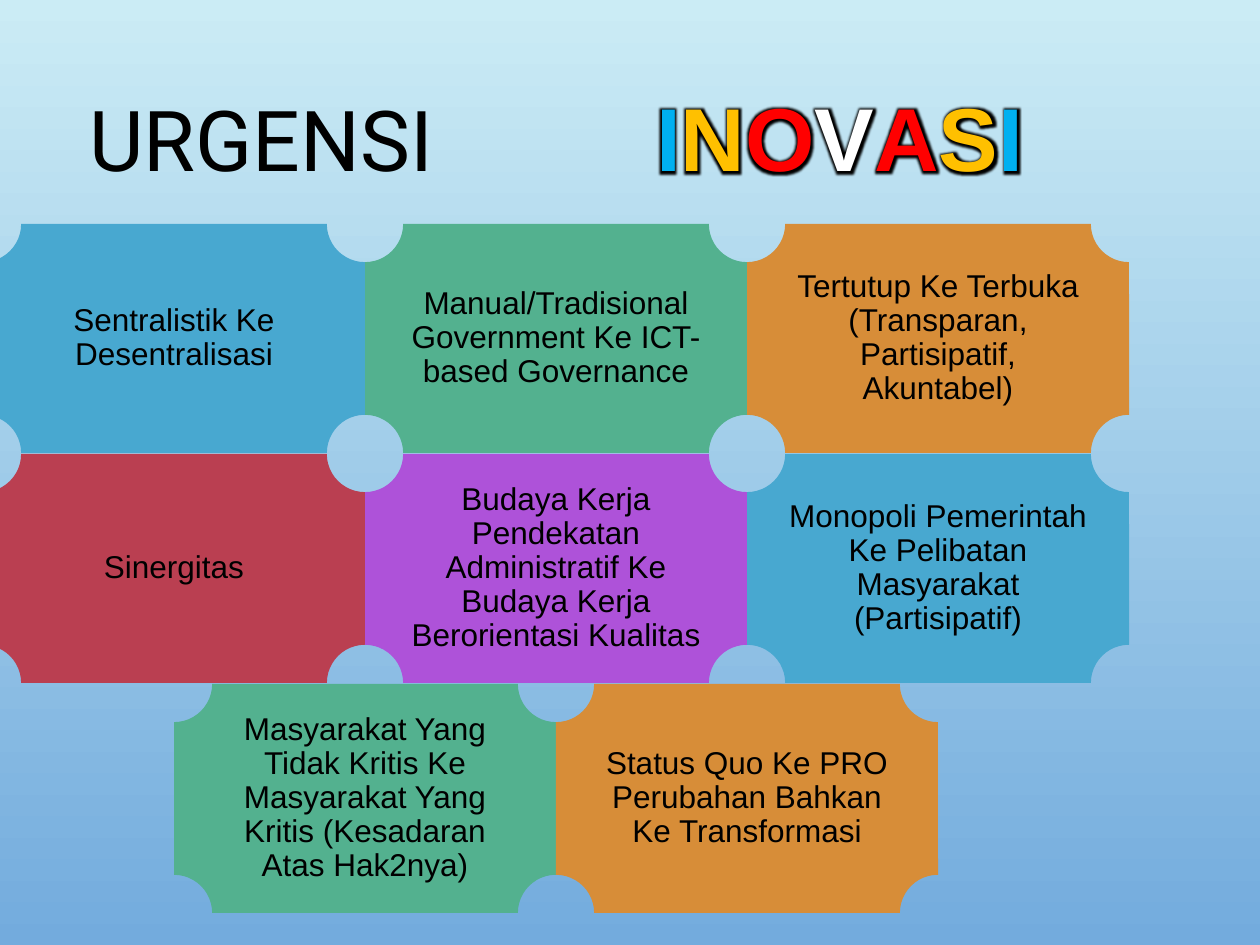
from lxml.etree import SubElement
from pptx import Presentation
from pptx.dml.color import RGBColor
from pptx.enum.shapes import MSO_SHAPE
from pptx.enum.text import MSO_ANCHOR as ANCHOR, PP_ALIGN as ALIGN
from pptx.oxml.ns import qn
from pptx.util import Pt

PX = 914400 / 126
COLORS = {
    "sky": "CBECF5", "dusk": "73ABDD", "black": "000000", "white": "FFFFFF",
    "blue": "48A8D0", "green": "53B18F", "orange": "D78D38",
    "crimson": "BA3F51", "purple": "AE52D9",
    "cyan": "00B0F0", "gold": "FFC000", "red": "FF0000",
}
TILE_W, TILE_H = 382, 229
ROW_PITCH = 230
GRID_LEFT, GRID_TOP = -17, 224
ROWS = [
    (0, [("Sentralistik Ke Desentralisasi", "blue"),
         ("Manual/Tradisional Government Ke ICT-based Governance", "green"),
         ("Tertutup Ke Terbuka (Transparan, Partisipatif, Akuntabel)", "orange")]),
    (0, [("Sinergitas", "crimson"),
         ("Budaya Kerja Pendekatan Administratif Ke Budaya Kerja "
          "Berorientasi Kualitas", "purple"),
         ("Monopoli Pemerintah Ke Pelibatan Masyarakat (Partisipatif)", "blue")]),
    (TILE_W // 2, [
        ("Masyarakat Yang Tidak Kritis Ke Masyarakat Yang Kritis "
         "(Kesadaran Atas Hak2nya)", "green"),
        ("Status Quo Ke PRO Perubahan Bahkan Ke Transformasi", "orange")]),
]
LETTERS = list(zip("INOVASI",
                   ["cyan", "gold", "red", "white", "red", "gold", "cyan"]))


def px(*values):
    return [round(v * PX) for v in values]


def rgb(name):
    return RGBColor.from_string(COLORS[name])


def set_background(slide):
    fill = slide.background.fill
    fill.gradient()
    fill.gradient_angle = 270
    for stop, name, pos in zip(fill.gradient_stops, ["sky", "dusk"], [0, 1]):
        stop.color.rgb = rgb(name)
        stop.position = pos


def write(sp, parts, size, font, align, anchor, spacing, bold=False):
    tf = sp.text_frame
    tf.word_wrap = True
    tf.vertical_anchor = anchor
    p = tf.paragraphs[0]
    p.alignment = align
    p.line_spacing = spacing
    for text, color in parts:
        r = p.add_run()
        r.text = text
        r.font.size = Pt(size)
        r.font.name = font
        r.font.bold = bold
        r.font.color.rgb = rgb(color)


def add_tile(slide, x, y, text, color):
    sp = slide.shapes.add_shape(MSO_SHAPE.PLAQUE, *px(x, y, TILE_W, TILE_H))
    sp.shadow.inherit = False
    sp.fill.solid()
    sp.fill.fore_color.rgb = rgb(color)
    sp.line.fill.background()
    tf = sp.text_frame
    tf.margin_left = tf.margin_right = tf.margin_top = tf.margin_bottom = px(9)[0]
    write(sp, [(text, "black")], 18, "Arial", ALIGN.CENTER, ANCHOR.MIDDLE, 0.9)


def add_glow(r, color, radius):
    r_pr = r.font._element
    effects = SubElement(r_pr, qn("a:effectLst"))
    r_pr.find(qn("a:solidFill")).addnext(effects)
    glow = SubElement(effects, qn("a:glow"), rad=str(Pt(radius)))
    SubElement(glow, qn("a:srgbClr"), val=COLORS[color])


def add_title(slide):
    sp = slide.shapes.add_textbox(*px(77, 96, 420, 97))
    write(sp, [("URGENSI", "black")], 48, "Roboto", ALIGN.LEFT, ANCHOR.MIDDLE, 0.9)


def add_wordmark(slide):
    sp = slide.shapes.add_textbox(*px(514, 100, 651, 93))
    write(sp, LETTERS, 51, "Arial", ALIGN.CENTER, ANCHOR.BOTTOM, 0.7, bold=True)
    for r in sp.text_frame.paragraphs[0].runs:
        add_glow(r, "black", 5)


def main():
    prs = Presentation()
    prs.slide_width, prs.slide_height = px(1260, 945)
    slide = prs.slides.add_slide(prs.slide_layouts[6])
    set_background(slide)
    add_title(slide)
    for row, (indent, tiles) in enumerate(ROWS):
        for col, (text, color) in enumerate(tiles):
            add_tile(slide, GRID_LEFT + indent + col * TILE_W,
                     GRID_TOP + row * ROW_PITCH, text, color)
    add_wordmark(slide)
    prs.save("out.pptx")


if __name__ == "__main__":
    main()
